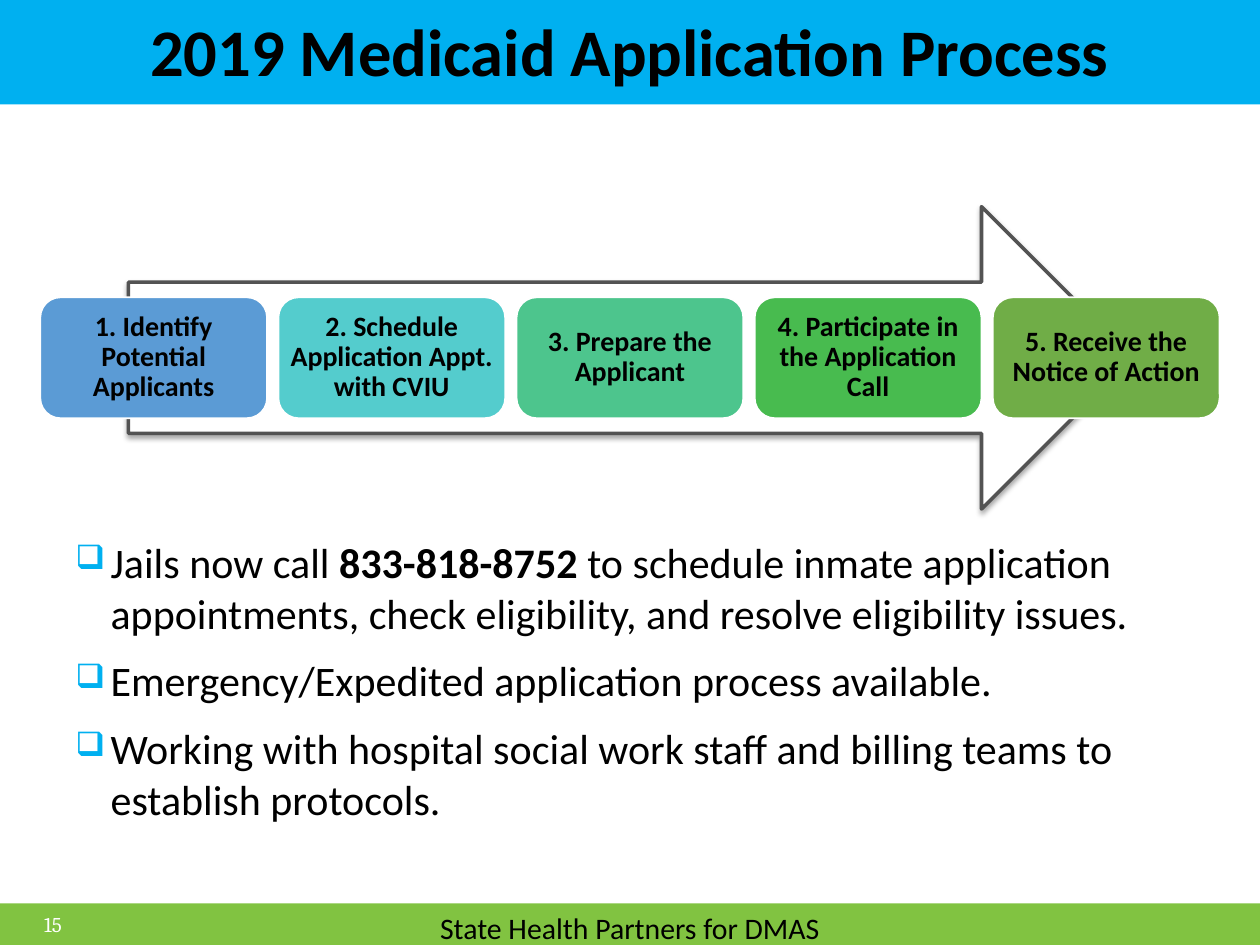
"""Build the Medicaid application process slide."""
from lxml import etree
from pptx import Presentation
from pptx.dml.color import RGBColor
from pptx.enum import shapes, text
from pptx.oxml.ns import qn
from pptx.util import Inches, Pt

BLACK = RGBColor(0x00, 0x00, 0x00)
WHITE = RGBColor(0xFF, 0xFF, 0xFF)
BLUE = RGBColor(0x00, 0xB0, 0xF0)
GREEN = RGBColor(0x81, 0xC3, 0x41)
GRAY = RGBColor(0x53, 0x53, 0x53)

STEPS = [
    ("1. Identify Potential Applicants", RGBColor(0x5B, 0x9B, 0xD5)),
    ("2. Schedule Application Appt. with CVIU", RGBColor(0x54, 0xCC, 0xCD)),
    ("3. Prepare the Applicant", RGBColor(0x4D, 0xC5, 0x8D)),
    ("4. Participate in the Application Call", RGBColor(0x48, 0xBB, 0x4F)),
    ("5. Receive the Notice of Action", RGBColor(0x70, 0xAD, 0x47)),
]
BULLETS = [
    [("Jails now call ", False), ("833-818-8752 ", True),
     ("to schedule inmate application appointments, check eligibility, "
      "and resolve eligibility issues.", False)],
    [("Emergency/Expedited application process available.", False)],
    [("Working with hospital social work staff and billing teams to "
      "establish protocols.", False)],
]

presentation = Presentation()
presentation.slide_width = Inches(10)
presentation.slide_height = Inches(7.5)
slide = presentation.slides.add_slide(presentation.slide_layouts[6])


def add_block(kind, left, top, width, height, fill, line=None, line_width=1):
    shape = slide.shapes.add_shape(
        kind, Inches(left), Inches(top), Inches(width), Inches(height))
    shape.shadow.inherit = False
    shape.fill.solid()
    shape.fill.fore_color.rgb = fill
    if line is None:
        shape.line.fill.background()
    else:
        shape.line.color.rgb = line
        shape.line.width = Pt(line_width)
    return shape


def write_line(shape, wording, size, color=BLACK, bold=False, inset=0.05,
               align=text.PP_ALIGN.CENTER, font="Calibri"):
    frame = shape.text_frame
    frame.text = wording
    frame.word_wrap = True
    frame.vertical_anchor = text.MSO_ANCHOR.MIDDLE
    frame.margin_left = frame.margin_right = Inches(inset)
    frame.margin_top = frame.margin_bottom = Inches(inset)
    paragraph = frame.paragraphs[0]
    paragraph.alignment = align
    run_font = paragraph.runs[0].font
    run_font.name = font
    run_font.size = Pt(size)
    run_font.bold = bold
    run_font.color.rgb = color
    return paragraph


add_block(shapes.MSO_SHAPE.RECTANGLE, 0, 0, 10, 0.83, BLUE)
add_block(shapes.MSO_SHAPE.RECTANGLE, 0, 7.17, 10, 0.33, GREEN)

footer = slide.shapes.add_textbox(Inches(1.5), Inches(7.2), Inches(7), Inches(0.33))
write_line(footer, "State Health Partners for DMAS", 17, inset=0)

title = slide.shapes.add_textbox(Inches(0.5), Inches(0.01), Inches(9), Inches(0.78))
write_line(title, "2019 Medicaid Application Process", 38, bold=True)

body = slide.shapes.add_textbox(Inches(0.5), Inches(4.21), Inches(9), Inches(2.4))
body.text_frame.word_wrap = True
for index, parts in enumerate(BULLETS):
    if index == 0:
        paragraph = body.text_frame.paragraphs[0]
    else:
        paragraph = body.text_frame.add_paragraph()
        paragraph.space_before = Pt(10)
    properties = paragraph._p.get_or_add_pPr()
    properties.set("marL", str(Inches(0.28)))
    properties.set("indent", str(Inches(-0.28)))
    bullet_color = etree.SubElement(properties, qn("a:buClr"))
    etree.SubElement(bullet_color, qn("a:srgbClr"), val=str(BLUE))
    etree.SubElement(properties, qn("a:buSzPct"), val="80000")
    etree.SubElement(properties, qn("a:buChar"), char="❑")
    for wording, bold in parts:
        run = paragraph.add_run()
        run.text = wording
        run.font.name = "Calibri"
        run.font.size = Pt(24)
        run.font.bold = bold
        run.font.color.rgb = BLACK

arrow = add_block(shapes.MSO_SHAPE.RIGHT_ARROW, 1.02, 1.64, 7.97, 2.4, WHITE, GRAY, 2)
effects = arrow._element.spPr.find(qn("a:effectLst"))
shadow = etree.SubElement(
    effects, qn("a:outerShdw"), blurRad=str(Pt(3)), dist=str(Pt(1.8)),
    dir="5400000", rotWithShape="0")
shadow_color = etree.SubElement(shadow, qn("a:srgbClr"), val=str(BLACK))
etree.SubElement(shadow_color, qn("a:alpha"), val="35000")

for index, (wording, fill) in enumerate(STEPS):
    step = add_block(shapes.MSO_SHAPE.ROUNDED_RECTANGLE,
                     0.32 + 1.89 * index, 2.36, 1.8, 0.96, fill, WHITE)
    paragraph = write_line(step, wording, 16, bold=True, inset=0.04)
    paragraph.line_spacing = 0.9

number = slide.shapes.add_textbox(Inches(0.04), Inches(7.17), Inches(0.5), Inches(0.33))
write_line(number, "15", 12, WHITE, align=text.PP_ALIGN.RIGHT, font="Cambria")

presentation.save("out.pptx")
